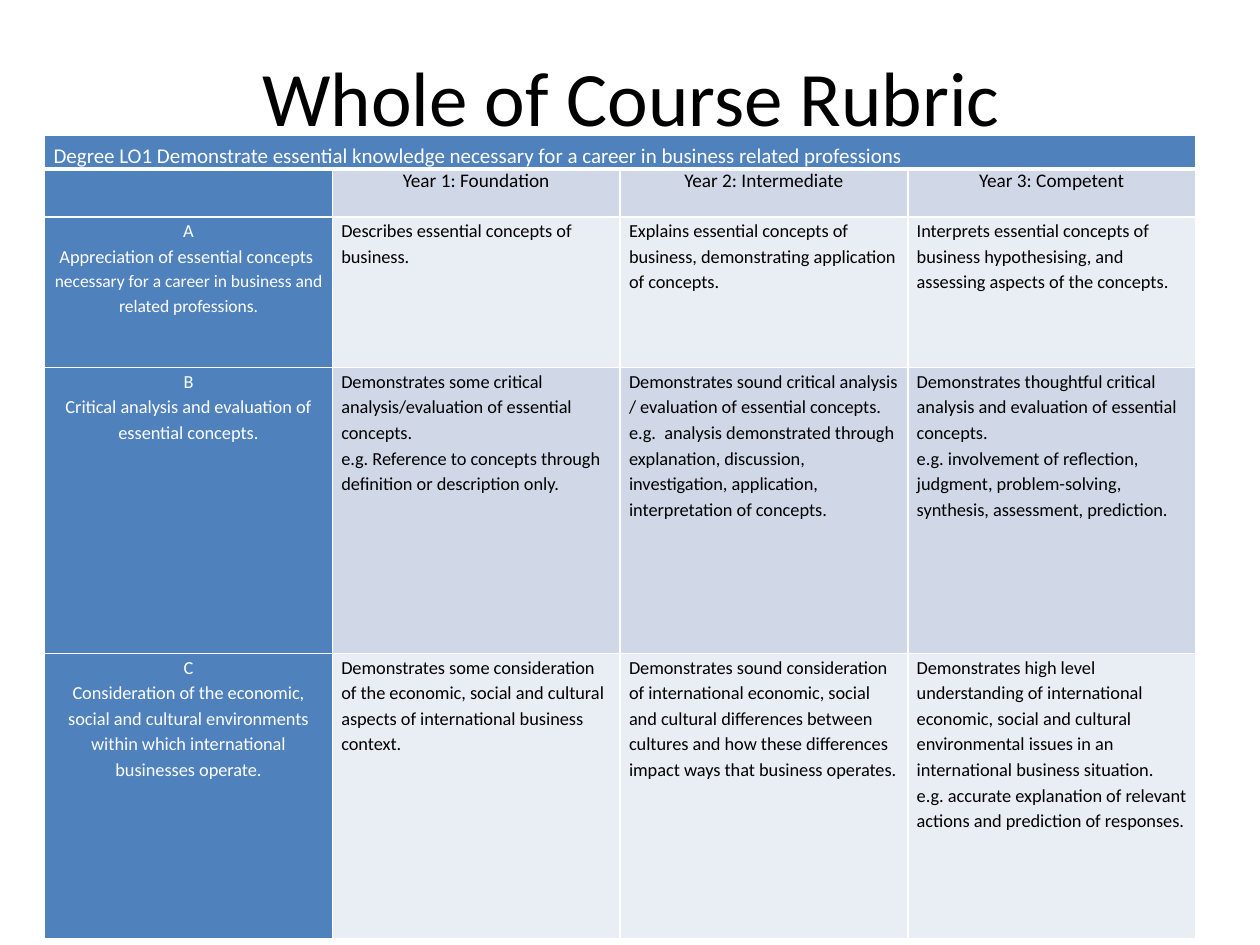
from dataclasses import dataclass

from lxml.etree import SubElement
from pptx import Presentation
from pptx.dml.color import RGBColor
from pptx.enum.text import MSO_ANCHOR, PP_ALIGN
from pptx.oxml.ns import qn
from pptx.util import Cm, Pt


@dataclass(frozen=True)
class Theme:
    font: str = "Calibri"
    accent: str = "4F81BD"
    band_dark: str = "D0D8E8"
    band_light: str = "E9EDF4"
    white: str = "FFFFFF"
    black: str = "000000"
    title_size: float = 44
    outcome_size: float = 12
    year_size: float = 11
    body_size: float = 10.5
    small_size: float = 10
    border: float = 1
    heavy_border: float = 3


THEME = Theme()

OUTCOME = ("Degree LO1 Demonstrate essential knowledge necessary for a career "
           "in business related professions")
YEARS = ["Year 1: Foundation", "Year 2: Intermediate", "Year 3: Competent"]

# Each criterion: its heading paragraphs, then the paragraphs for each year.
CRITERIA = [
    (["A", "Appreciation of essential concepts ",
      "necessary for a career in business and related professions."],
     ["Describes essential concepts of business."],
     ["Explains essential concepts of business, demonstrating application of concepts."],
     ["Interprets essential concepts of business hypothesising, and assessing "
      "aspects of the concepts."]),
    (["B", "Critical analysis and evaluation of essential concepts."],
     ["Demonstrates some critical analysis/evaluation of essential concepts.",
      "e.g. Reference to concepts through definition or description only."],
     ["Demonstrates sound critical analysis / evaluation of essential concepts.",
      "e.g.  analysis demonstrated through explanation, discussion, investigation, "
      "application, interpretation of concepts."],
     ["Demonstrates thoughtful critical analysis and evaluation of essential concepts.",
      "e.g. involvement of reflection, judgment, problem-solving, synthesis, "
      "assessment, prediction."]),
    (["C", "Consideration of the economic, social and cultural environments within "
      "which international businesses operate."],
     ["Demonstrates some consideration of the economic, social and cultural aspects "
      "of international business context."],
     ["Demonstrates sound consideration of international economic, social and cultural "
      "differences between cultures and how these differences impact ways that "
      "business operates."],
     ["Demonstrates high level understanding of international economic, social and "
      "cultural environmental issues in an international business situation.",
      "e.g. accurate explanation of relevant actions and prediction of responses."]),
]

COLUMN_WIDTH = 5.8
ROW_HEIGHTS = [0.68, 0.96, 3.04, 5.76, 5.76]


def style_paragraph(paragraph, size, color, align=PP_ALIGN.LEFT, spacing=None):
    paragraph.alignment = align
    paragraph.line_spacing = spacing
    paragraph.font.name = THEME.font
    paragraph.font.size = Pt(size)
    paragraph.font.color.rgb = RGBColor.from_string(color)


def set_borders(cell, bottom=THEME.border):
    """Draw white lines on all four sides of a cell."""
    properties = cell._tc.get_or_add_tcPr()
    for side, width in zip("LRTB", [THEME.border] * 3 + [bottom]):
        line = SubElement(properties, qn(f"a:ln{side}"), w=str(Pt(width)))
        SubElement(SubElement(line, qn("a:solidFill")), qn("a:srgbClr"), val=THEME.white)


def fill_cell(cell, paragraphs, fill, color, size=THEME.body_size,
              align=PP_ALIGN.LEFT, spacing=1.15, bottom=THEME.border):
    set_borders(cell, bottom)
    cell.fill.solid()
    cell.fill.fore_color.rgb = RGBColor.from_string(fill)
    cell.margin_left = cell.margin_right = Cm(0.18)
    cell.margin_top = cell.margin_bottom = 0
    cell.text = "\n".join(paragraphs)
    for paragraph in cell.text_frame.paragraphs:
        style_paragraph(paragraph, size, color, align, spacing)


def add_title(slide):
    title = slide.shapes.add_textbox(Cm(1.3), Cm(0.33), Cm(22.86), Cm(3.18))
    frame = title.text_frame
    frame.word_wrap = True
    frame.vertical_anchor = MSO_ANCHOR.MIDDLE
    frame.text = "Whole of Course Rubric"
    style_paragraph(frame.paragraphs[0], THEME.title_size, THEME.black, PP_ALIGN.CENTER)


def add_rubric(slide):
    column_count = len(YEARS) + 1
    rubric = slide.shapes.add_table(
        len(ROW_HEIGHTS), column_count, Cm(0.9), Cm(2.73),
        Cm(COLUMN_WIDTH * column_count), Cm(sum(ROW_HEIGHTS))).table
    for column in rubric.columns:
        column.width = Cm(COLUMN_WIDTH)
    for row, height in zip(rubric.rows, ROW_HEIGHTS):
        row.height = Cm(height)

    outcome = rubric.cell(0, 0)
    outcome.merge(rubric.cell(0, column_count - 1))
    fill_cell(outcome, [OUTCOME], THEME.accent, THEME.white, THEME.outcome_size,
              bottom=THEME.heavy_border)
    outcome.vertical_anchor = MSO_ANCHOR.BOTTOM

    fill_cell(rubric.cell(1, 0), [], THEME.accent, THEME.white)
    for column, year in enumerate(YEARS, start=1):
        fill_cell(rubric.cell(1, column), [year], THEME.band_dark, THEME.black,
                  THEME.year_size, PP_ALIGN.CENTER, spacing=None)

    for row, (heading, *levels) in enumerate(CRITERIA, start=2):
        band = THEME.band_dark if row % 2 else THEME.band_light
        fill_cell(rubric.cell(row, 0), heading, THEME.accent, THEME.white,
                  align=PP_ALIGN.CENTER)
        for column, level in enumerate(levels, start=1):
            fill_cell(rubric.cell(row, column), level, band, THEME.black)
    rubric.cell(2, 0).text_frame.paragraphs[-1].font.size = Pt(THEME.small_size)


def main():
    presentation = Presentation()
    presentation.slide_width, presentation.slide_height = Cm(25.4), Cm(19.05)
    slide = presentation.slides.add_slide(presentation.slide_layouts[6])
    add_rubric(slide)
    add_title(slide)
    presentation.save("out.pptx")


if __name__ == "__main__":
    main()
